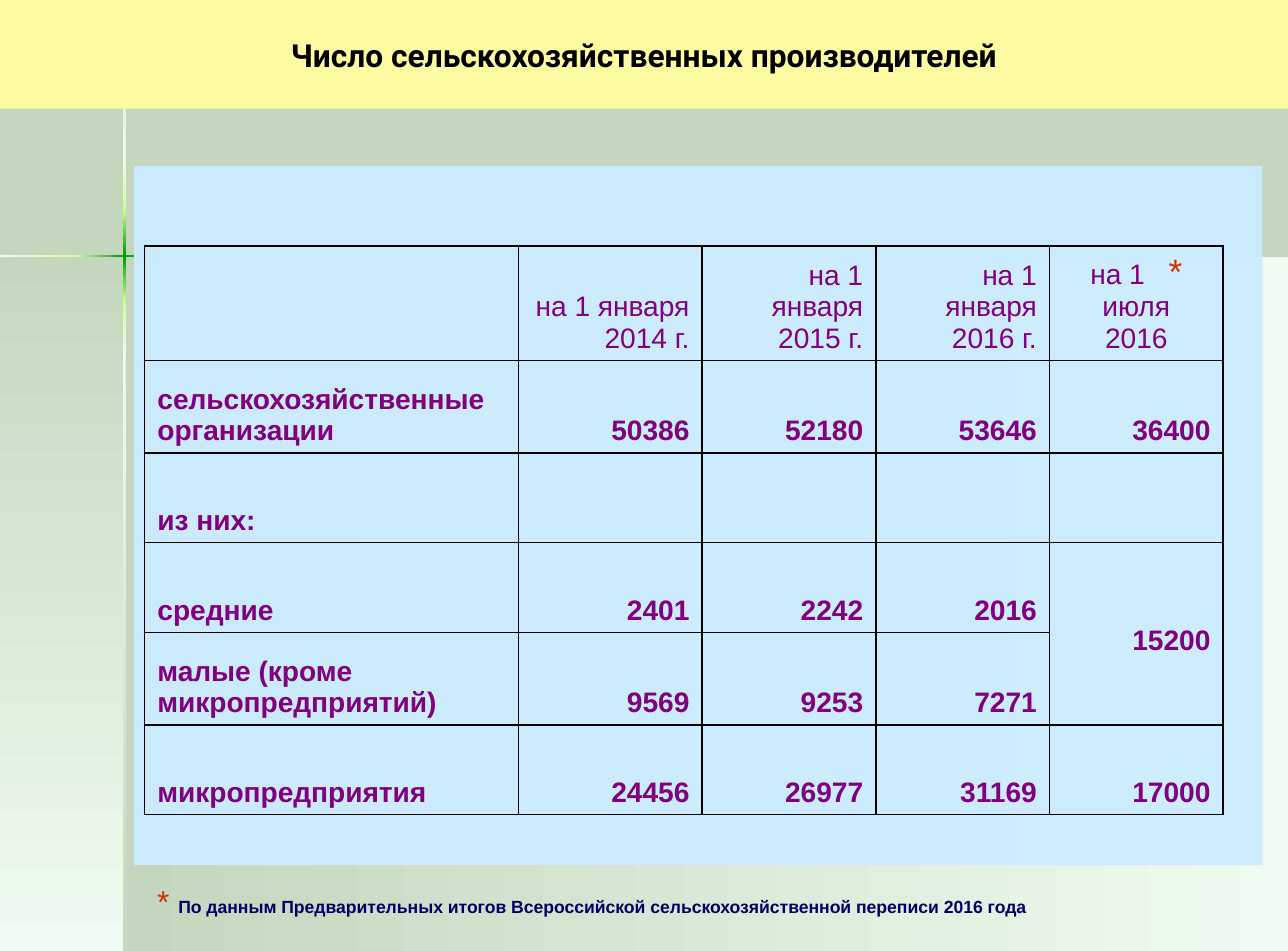
from itertools import pairwise
from lxml.etree import SubElement
from pptx import Presentation
from pptx.dml.color import RGBColor
from pptx.enum.shapes import MSO_SHAPE
from pptx.enum.text import MSO_ANCHOR, PP_ALIGN
from pptx.oxml.ns import qn
from pptx.util import Cm, Pt

SAGE, MINT, LIME, GREEN = "C4D6BE", "EFFBF0", "CCFF99", "009900"
PURPLE, RED, NAVY = "800080", "CC3300", "000066"
WIDTH, HEIGHT = 25.81, 19.05


def format_run(run, size, color, bold=False, name="Arial"):
    run.font.size = Pt(size)
    run.font.name = name
    run.font.bold = bold
    run.font.color.rgb = RGBColor.from_string(color)


def add_box(left, top, width, height, colors, angle=0):
    shape = slide.shapes.add_shape(
        MSO_SHAPE.RECTANGLE, Cm(left), Cm(top), Cm(width), Cm(height))
    shape.shadow.inherit = False
    shape.line.fill.background()
    if len(colors) == 1:
        shape.fill.solid()
        shape.fill.fore_color.rgb = RGBColor.from_string(colors[0])
    else:
        shape.fill.gradient()
        shape.fill.gradient_angle = angle
        for stop, color in zip(shape.fill.gradient_stops, colors):
            stop.color.rgb = RGBColor.from_string(color)
    return shape


presentation = Presentation()
presentation.slide_width, presentation.slide_height = Cm(WIDTH), Cm(HEIGHT)
slide = presentation.slides.add_slide(presentation.slide_layouts[6])
slide.background.fill.solid()
slide.background.fill.fore_color.rgb = RGBColor.from_string(SAGE)

cross_x, cross_y, beam = 2.49, 5.13, 0.06
add_box(cross_x, cross_y, WIDTH - cross_x, HEIGHT - cross_y, [SAGE, MINT])
add_box(0, cross_y, cross_x, HEIGHT - cross_y, [SAGE, MINT], 270)

vertical_stops = [(0, SAGE), (3.07, MINT), (4.19, LIME), (5.12, GREEN),
                  (6.05, LIME), (7.16, MINT), (HEIGHT, SAGE)]
for (start, first), (end, last) in pairwise(vertical_stops):
    add_box(cross_x - beam / 2, start, beam, end - start, [first, last], 270)

horizontal_stops = [(0, MINT), (1.56, LIME), (2.49, GREEN), (3.43, LIME),
                    (4.57, MINT), (WIDTH, SAGE)]
for (start, first), (end, last) in pairwise(horizontal_stops):
    add_box(start, cross_y - beam / 2, end - start, beam, [first, last])

title = add_box(0, 0, WIDTH, 2.18, ["FEFCA2"])
title.text_frame.text = "Число сельскохозяйственных производителей"
title.text_frame.vertical_anchor = MSO_ANCHOR.MIDDLE
title_paragraph = title.text_frame.paragraphs[0]
title_paragraph.alignment = PP_ALIGN.CENTER
format_run(title_paragraph.runs[0], 18, "000000", True, "Roboto")

panel = add_box(2.69, 3.33, 22.61, 14, ["CCECFF"])
panel_color = panel.fill._xPr.find(qn("a:solidFill"))[0]
SubElement(panel_color, qn("a:alpha"), val="96000")

rows = [
    ["", "на 1 января 2014 г.", "на 1 января 2015 г.", "на 1 января 2016 г.",
     "на 1\nиюля\n2016"],
    ["сельскохозяйственные организации", "50386", "52180", "53646", "36400"],
    ["из них:", "", "", "", ""],
    ["средние", "2401", "2242", "2016", "15200"],
    ["малые (кроме микропредприятий)", "9569", "9253", "7271", ""],
    ["микропредприятия", "24456", "26977", "31169", "17000"],
]
column_widths = [7.49, 3.68, 3.48, 3.48, 3.48]
row_heights = [2.29, 1.85, 1.8, 1.8, 1.85, 1.8]
table = slide.shapes.add_table(
    len(rows), len(column_widths), Cm(2.9), Cm(4.93),
    Cm(sum(column_widths)), Cm(sum(row_heights))).table
table.first_row = table.horz_banding = False
for column, width in zip(table.columns, column_widths):
    column.width = Cm(width)
for row, height in zip(table.rows, row_heights):
    row.height = Cm(height)

for row_index, texts in enumerate(rows):
    for column_index, text in enumerate(texts):
        cell = table.cell(row_index, column_index)
        cell.text_frame.text = text
        cell.vertical_anchor = MSO_ANCHOR.BOTTOM
        for paragraph in cell.text_frame.paragraphs:
            paragraph.alignment = PP_ALIGN.RIGHT if column_index else PP_ALIGN.LEFT
            for run in paragraph.runs:
                format_run(run, 16, PURPLE, row_index > 0)
        properties = cell._tc.get_or_add_tcPr()
        for side in ("a:lnL", "a:lnR", "a:lnT", "a:lnB"):
            border = SubElement(properties, qn(side), w=str(Pt(1)))
            border_fill = SubElement(border, qn("a:solidFill"))
            SubElement(border_fill, qn("a:srgbClr"), val="000000")
        cell.fill.background()

july_cell = table.cell(0, 4)
july_cell.margin_top = Cm(0)
for paragraph in july_cell.text_frame.paragraphs:
    paragraph.alignment = PP_ALIGN.CENTER
july_paragraph = july_cell.text_frame.paragraphs[0]
gap = july_paragraph.add_run()
gap.text = " "
format_run(gap, 16, PURPLE)
gap.font._element.set("spc", "900")
asterisk = july_paragraph.add_run()
asterisk.text = "*"
format_run(asterisk, 20, RED)

merged_cell = table.cell(3, 4)
merged_cell.merge(table.cell(4, 4))
merged_cell.vertical_anchor = MSO_ANCHOR.MIDDLE
merged_cell.margin_top = Cm(0.4)

footnote = slide.shapes.add_textbox(Cm(2.9), Cm(17.53), Cm(18.16), Cm(1.02))
footnote.text_frame.word_wrap = False
footnote_paragraph = footnote.text_frame.paragraphs[0]
for text, size, color, bold in [
    ("* ", 18, RED, False),
    ("По данным Предварительных итогов Всероссийской "
     "сельскохозяйственной переписи 2016 года", 10, NAVY, True),
]:
    run = footnote_paragraph.add_run()
    run.text = text
    format_run(run, size, color, bold)

presentation.save("out.pptx")
